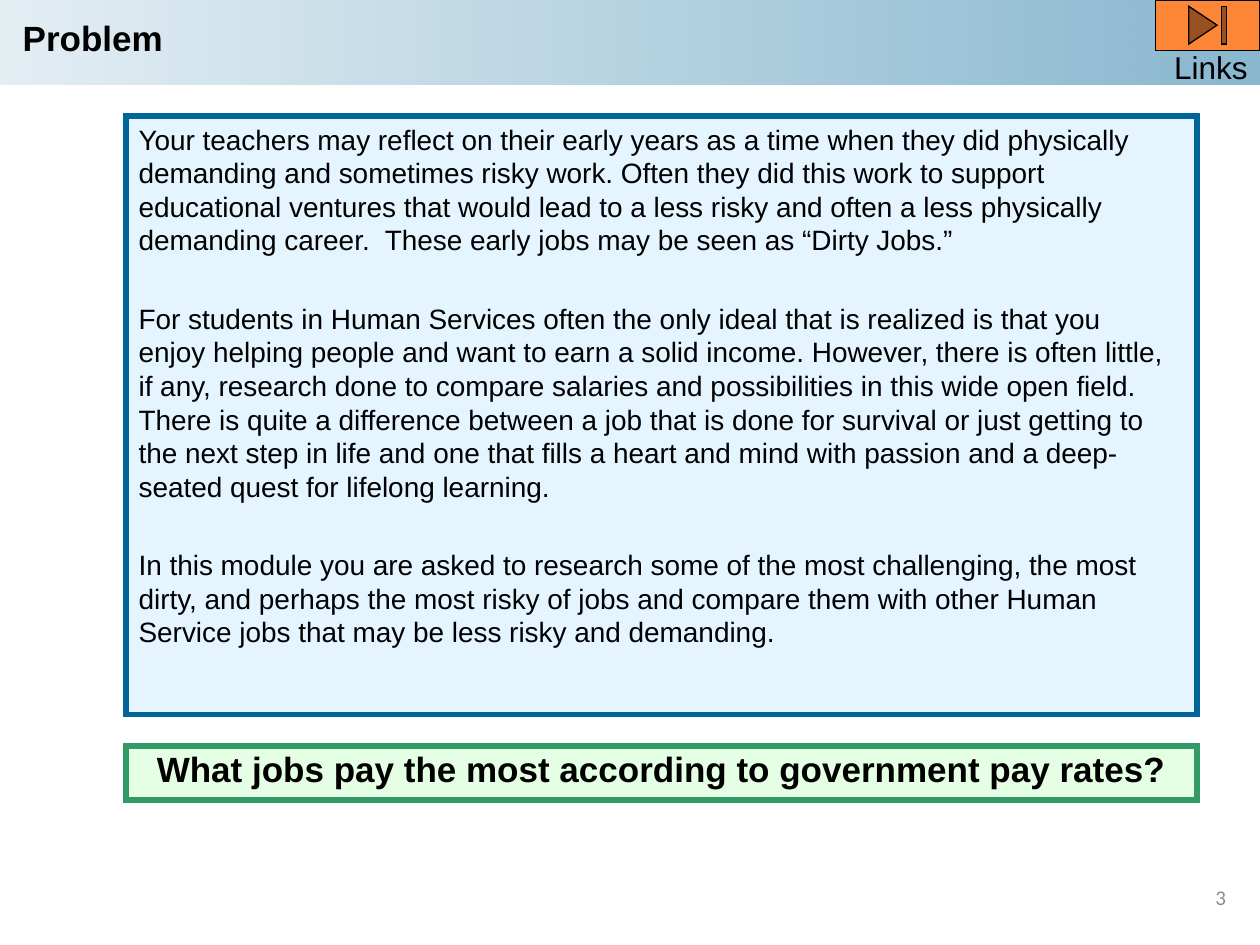
from lxml import etree
from pptx import Presentation
from pptx.dml.color import RGBColor
from pptx.enum.shapes import MSO_SHAPE as Shape
from pptx.enum.text import MSO_ANCHOR as Anchor, MSO_AUTO_SIZE as AutoSize, PP_ALIGN as Align
from pptx.oxml.ns import qn
from pptx.util import Inches, Pt

COLORS = {
    "black": "000000", "grey": "8C8C8C", "blue": "006699", "pale_blue": "CCECFF",
    "green": "339966", "pale_green": "CCFFCC", "orange": "FE8637",
}
PROBLEM = [
    "Your teachers may reflect on their early years as a time when they did physically "
    "demanding and sometimes risky work. Often they did this work to support educational "
    "ventures that would lead to a less risky and often a less physically demanding career.  "
    "These early jobs may be seen as “Dirty Jobs.”",
    "For students in Human Services often the only ideal that is realized is that you\v"
    "enjoy helping people and want to earn a solid income. However, there is often little, "
    "if any, research done to compare salaries and possibilities in this wide open field. "
    "There is quite a difference between a job that is done for survival or just getting to "
    "the next step in life and one that fills a heart and mind with passion and a deep-seated "
    "quest for lifelong learning.",
    "In this module you are asked to research some of the most challenging, the most dirty, "
    "and perhaps the most risky of jobs and compare them with other Human Service jobs that "
    "may be less risky and demanding.",
]


def rgb(name):
    """Return the named colour."""
    return RGBColor.from_string(COLORS[name])


def place(sp, x, y, w, h):
    """Move and size a shape, in inches."""
    sp.left, sp.top, sp.width, sp.height = (Inches(v) for v in (x, y, w, h))


def set_alpha(sp, *percents):
    """Set the opacity of each fill colour of a shape in turn."""
    for clr, percent in zip(sp.element.spPr.iter(qn("a:srgbClr")), percents):
        etree.SubElement(clr, qn("a:alpha")).set("val", str(percent * 1000))


def style_box(sp, fill, line, width, alpha=100):
    """Set the fill, its opacity and a square-cornered outline."""
    sp.fill.solid()
    sp.fill.fore_color.rgb = rgb(fill)
    if alpha < 100:
        set_alpha(sp, alpha)
    sp.line.color.rgb = rgb(line)
    sp.line.width = Pt(width)
    ln = sp.element.spPr.find(qn("a:ln"))
    etree.SubElement(ln, qn("a:miter")).set("lim", "800000")


def add_shape(s, kind, x, y, w, h):
    """Add a preset shape without a shadow."""
    sp = s.shapes.add_shape(kind, *(Inches(v) for v in (x, y, w, h)))
    sp.shadow.inherit = False
    return sp


def write(sp, texts, size, font="Arial", color="black", bold=False, align=Align.LEFT,
          anchor=Anchor.TOP, wrap=True, spacing=None, before=0, gap=0):
    """Write formatted paragraphs into a shape."""
    tf = sp.text_frame
    tf.word_wrap, tf.auto_size, tf.vertical_anchor = wrap, AutoSize.NONE, anchor
    for i, text in enumerate(texts):
        p = tf.add_paragraph() if i else tf.paragraphs[0]
        p.text = text
        p.alignment, p.line_spacing = align, spacing
        p.space_before = Pt(gap if i else before)
        for r in p.runs:
            r.font.name, r.font.size, r.font.bold = font, Pt(size), bold
            r.font.color.rgb = rgb(color)


def add_label(s, text, x, y, w, h, **fmt):
    """Add a text box with one paragraph."""
    sp = s.shapes.add_textbox(*(Inches(v) for v in (x, y, w, h)))
    write(sp, [text], **fmt)


def add_band(s):
    """Add the translucent gradient band across the top."""
    sp = add_shape(s, Shape.RECTANGLE, 0, 0, 10, 0.67)
    sp.fill.gradient()
    sp.fill.gradient_angle = 0
    for stop in sp.fill.gradient_stops:
        stop.color.rgb = rgb("blue")
    set_alpha(sp, 11, 47)
    sp.line.fill.background()


def remove_bullets(sp):
    """Turn off bullets and indents in a list placeholder."""
    for p in sp.text_frame.paragraphs:
        pPr = p._p.get_or_add_pPr()
        pPr.set("marL", "0")
        pPr.set("indent", "0")
        etree.SubElement(pPr, qn("a:buNone"))


def main():
    """Build the slide and save it."""
    prs = Presentation()
    prs.slide_width, prs.slide_height = Inches(10), Inches(7.5)
    s = prs.slides.add_slide(prs.slide_layouts[1])
    title, body = s.shapes.title, s.placeholders[1]

    add_band(s)
    button = add_shape(s, Shape.ACTION_BUTTON_END, 9.17, 0, 0.83, 0.4)
    style_box(button, "orange", "black", 0.75)
    add_label(s, "Links", 9.22, 0.33, 0.78, 0.4, size=18, wrap=False)
    add_label(s, "3", 7.5, 6.92, 2.33, 0.4, size=12, font="Calibri", color="grey",
              align=Align.RIGHT, anchor=Anchor.MIDDLE)

    place(body, 1, 0.92, 8.5, 4.75)
    style_box(body, "pale_blue", "blue", 3, alpha=50)
    write(body, PROBLEM, 16, spacing=Pt(19.2), before=3.2, gap=25.6)
    remove_bullets(body)

    place(title, 0.08, 0.08, 1.6, 0.43)
    write(title, ["Problem"], 20, bold=True)
    for sp in (body, title):
        s.shapes.element.append(sp.element)

    question = add_shape(s, Shape.RECTANGLE, 1, 5.92, 8.5, 0.43)
    style_box(question, "pale_green", "green", 3, alpha=50)
    write(question, ["What jobs pay the most according to government pay rates?"], 20,
          bold=True, align=Align.CENTER, spacing=0.9, before=4)
    prs.save("out.pptx")


if __name__ == "__main__":
    main()
